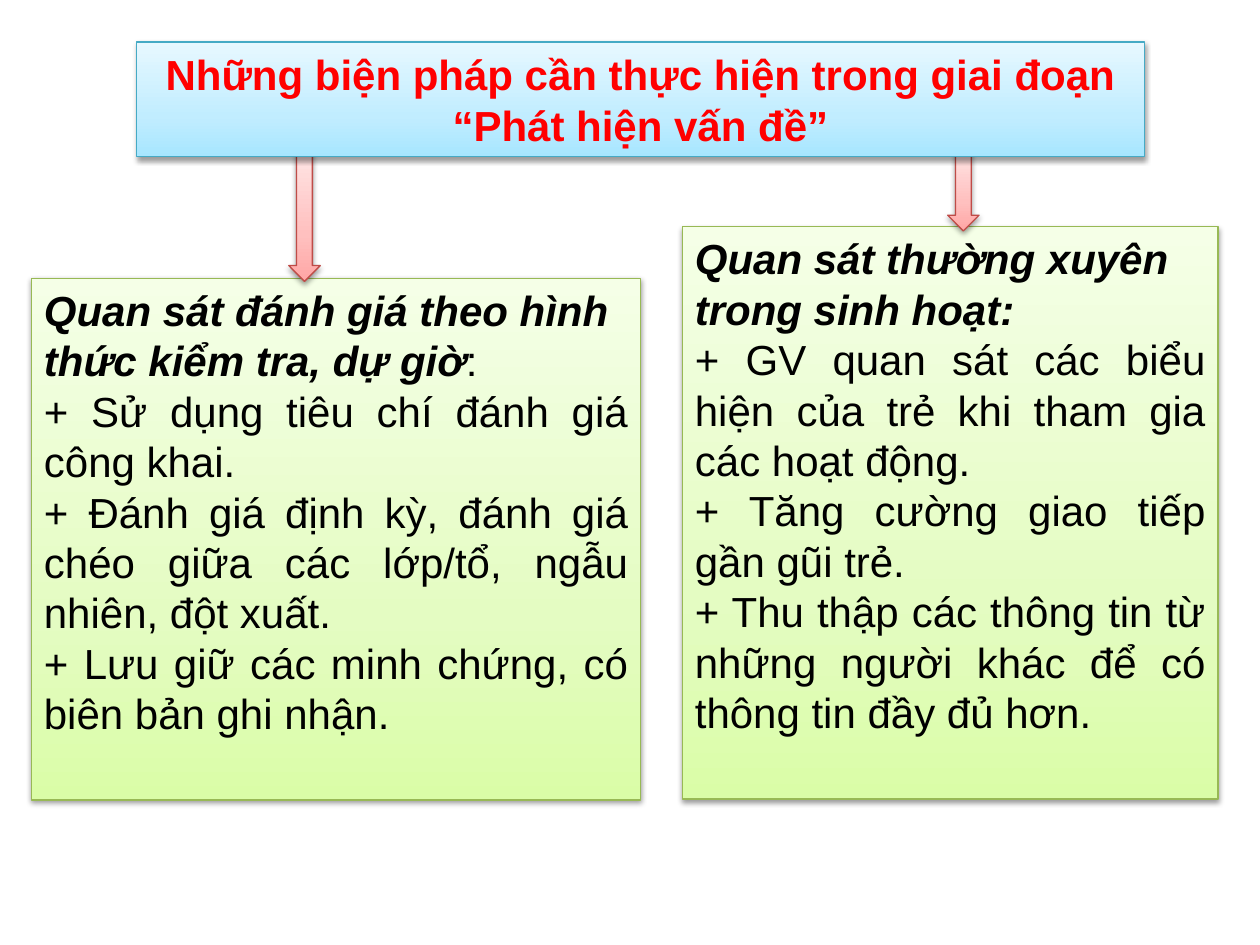
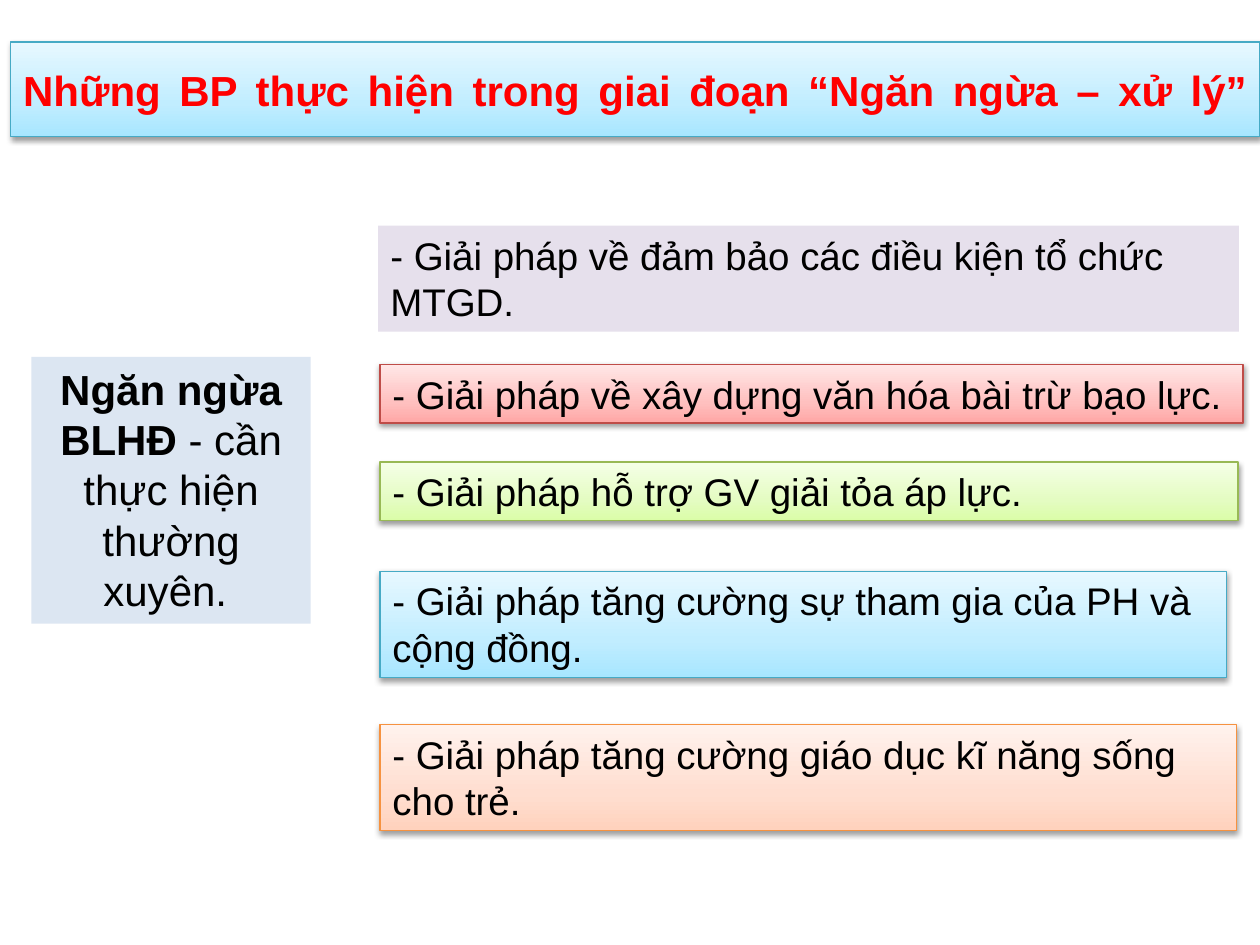
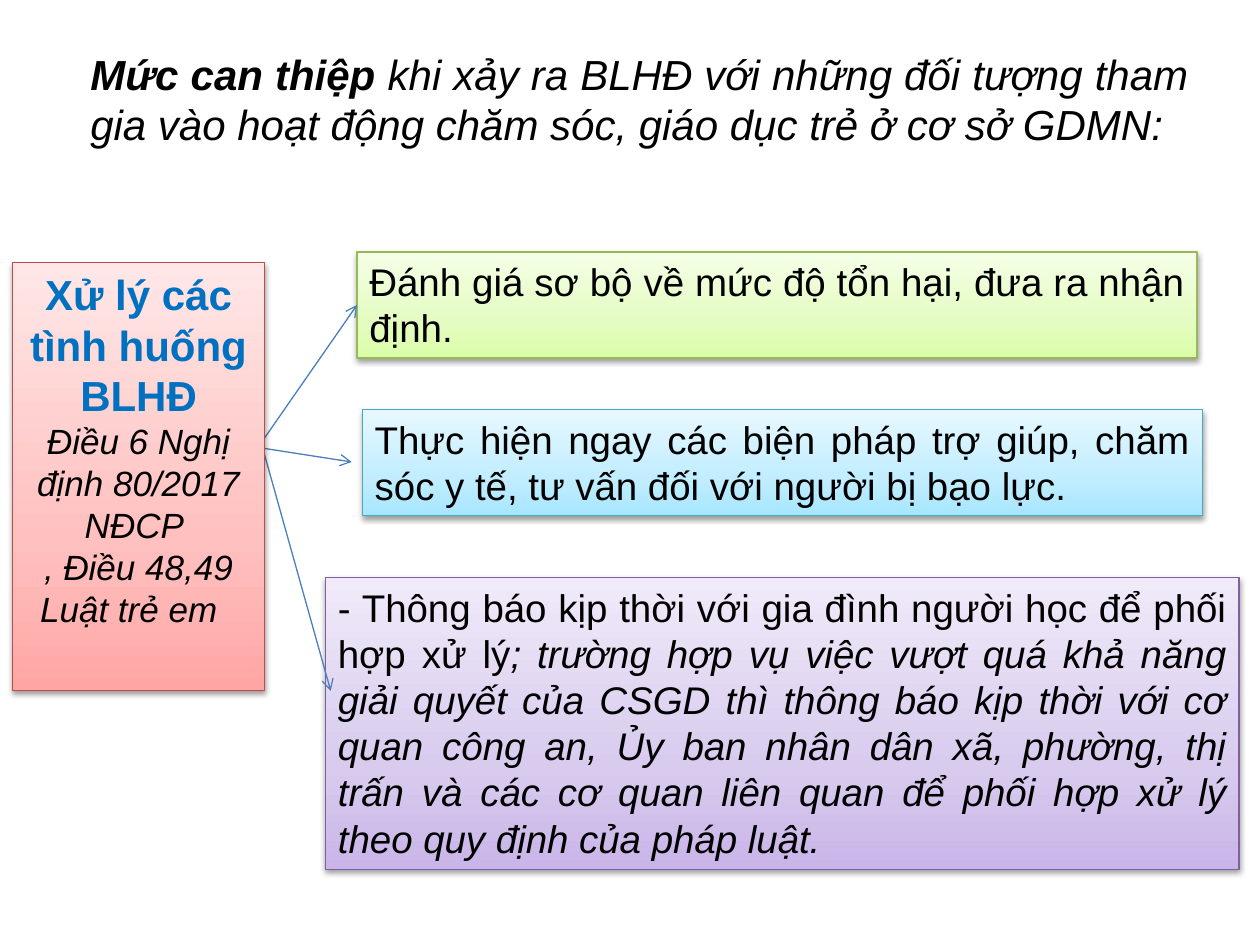
"""Build three slides on handling violence in preschool care."""
from copy import deepcopy

from lxml import etree
from pptx import Presentation
from pptx import util as u
from pptx.dml.color import RGBColor
from pptx.enum import shapes, text
from pptx.oxml.ns import qn

CELL = u.Inches(10) / 120
FONT = "Arial"
RECTANGLE = shapes.MSO_SHAPE.RECTANGLE
ARROW = shapes.MSO_SHAPE.DOWN_ARROW
LEFT, CENTER, JUSTIFY = text.PP_ALIGN.LEFT, text.PP_ALIGN.CENTER, text.PP_ALIGN.JUSTIFY
TOP, MIDDLE = text.MSO_ANCHOR.TOP, text.MSO_ANCHOR.MIDDLE

BLACK = RGBColor(0x00, 0x00, 0x00)
TITLE_RED = RGBColor(0xFF, 0x00, 0x00)
HEADING_BLUE = RGBColor(0x00, 0x70, 0xC0)
LINK_BLUE = RGBColor(0x4B, 0x7E, 0xBC)
PALE_BLUE = [RGBColor(0xDC, 0xE6, 0xF2)]
PALE_PURPLE = [RGBColor(0xE6, 0xE0, 0xEC)]
GREEN = [RGBColor(0xDA, 0xFD, 0xA7), RGBColor(0xE4, 0xFC, 0xC2),
         RGBColor(0xF5, 0xFF, 0xE7), RGBColor(0x98, 0xB9, 0x55)]
RED = [RGBColor(0xFF, 0xA6, 0xA5), RGBColor(0xFF, 0xC0, 0xBF),
       RGBColor(0xFF, 0xE7, 0xE7), RGBColor(0xBF, 0x4C, 0x48)]
BLUE = [RGBColor(0xA7, 0xE6, 0xFF), RGBColor(0xC1, 0xED, 0xFF),
        RGBColor(0xE7, 0xF8, 0xFF), RGBColor(0x46, 0xAA, 0xC5)]
ORANGE = [RGBColor(0xFF, 0xD2, 0xBD), RGBColor(0xFF, 0xDE, 0xD0),
          RGBColor(0xFF, 0xF2, 0xED), RGBColor(0xF6, 0x92, 0x40)]
PURPLE = [RGBColor(0xC9, 0xB5, 0xE8), RGBColor(0xD8, 0xCB, 0xEE),
          RGBColor(0xF0, 0xEA, 0xF9), RGBColor(0x7D, 0x60, 0xA0)]


def block(slide, cells, palette, kind=RECTANGLE):
    """Place a shape, or the title when kind is None, and paint it."""
    place = [round(cell * CELL) for cell in cells]
    if kind is None:
        shape = slide.shapes.title
        shape.left, shape.top, shape.width, shape.height = place
    else:
        shape = slide.shapes.add_shape(kind, *place)
    shape.shadow.inherit = False
    if len(palette) < 4:
        shape.line.fill.background()
        if palette:
            shape.fill.solid()
            shape.fill.fore_color.rgb = palette[0]
        return shape
    *shades, edge = palette
    shape.fill.gradient()
    shape.fill.gradient_angle = 90
    stops = shape.element.find(".//" + qn("a:gsLst"))
    for stop in list(stops):
        stops.remove(stop)
    for position, shade in zip((0, 35000, 100000), shades):
        stop = etree.SubElement(stops, qn("a:gs"), pos=str(position))
        etree.SubElement(stop, qn("a:srgbClr"), val=str(shade))
    shape.line.color.rgb = edge
    shape.line.width = u.Pt(0.75)
    shadow = etree.SubElement(shape.element.find(".//" + qn("a:effectLst")), qn("a:outerShdw"),
                              blurRad="40000", dist="20000", dir="5400000", rotWithShape="0")
    tint = etree.SubElement(shadow, qn("a:srgbClr"), val=str(BLACK))
    etree.SubElement(tint, qn("a:alpha"), val="38000")
    return shape


def write(shape, paragraphs, size=24, color=BLACK, anchor=TOP):
    """Write (alignment, [(words, style), ...]) paragraphs; style letters are b and i."""
    frame = shape.text_frame
    frame.word_wrap = True
    frame.auto_size = text.MSO_AUTO_SIZE.NONE
    frame.vertical_anchor = anchor
    for index, (alignment, pieces) in enumerate(paragraphs):
        paragraph = frame.add_paragraph() if index else frame.paragraphs[0]
        paragraph.alignment = alignment
        for words, style in pieces:
            run = paragraph.add_run()
            run.text = words
            run.font.name = FONT
            run.font.size = u.Pt(size)
            run.font.color.rgb = color
            run.font.bold = "b" in style
            run.font.italic = "i" in style
    return frame


deck = Presentation()
deck.slide_width, deck.slide_height = u.Inches(10), u.Inches(7.5)
title_only = deck.slide_layouts[5]

detect = deck.slides.add_slide(title_only)
observations = [
    ((3, 26.5, 58, 49.7),
     [("Quan sát đánh giá theo hình thức kiểm tra, dự giờ", "bi"), (":", "")],
     ["+ Sử dụng tiêu chí đánh giá công khai.",
      "+ Đánh giá định kỳ, đánh giá chéo giữa các lớp/tổ, ngẫu nhiên, đột xuất.",
      "+ Lưu giữ các minh chứng, có biên bản ghi nhận."]),
    ((65, 21.6, 51, 54.5),
     [("Quan sát thường xuyên trong sinh hoạt:", "bi")],
     ["+ GV quan sát các biểu hiện của trẻ khi tham gia các hoạt động.",
      "+ Tăng cường giao tiếp gần gũi trẻ.",
      "+ Thu thập các thông tin từ những người khác để có thông tin đầy đủ hơn."]),
]
for cells, heading, measures in observations:
    write(block(detect, cells, GREEN),
          [(LEFT, heading)] + [(JUSTIFY, [(measure, "")]) for measure in measures])
for column, length in ((27.5, 12.8), (90.25, 8)):
    block(detect, (column, 14, 3, length), RED, ARROW)
detect_title = block(detect, (13, 4, 96, 10.9), BLUE, None)
write(detect_title,
      [(CENTER, [("Những biện pháp cần thực hiện trong giai đoạn “Phát hiện vấn đề”", "b")])],
      color=TITLE_RED, anchor=MIDDLE)
detect_title.element.getparent().append(detect_title.element)

prevent = deck.slides.add_slide(title_only)
prevent_title = block(prevent, (1, 4, 119, 9), BLUE, None)
headline = write(prevent_title,
                 [(JUSTIFY, [("Những BP thực hiện trong giai đoạn “Ngăn ngừa – xử lý”", "b")])],
                 color=TITLE_RED, anchor=MIDDLE).paragraphs[0].runs[0]
headline_xml = headline.font._element.getparent()
for add_break in (headline_xml.addprevious, headline_xml.addnext):
    line_break = etree.Element(qn("a:br"))
    line_break.append(deepcopy(headline_xml.find(qn("a:rPr"))))
    add_break(line_break)
write(block(prevent, (3, 34, 26.6, 25.4), PALE_BLUE),
      [(CENTER, [("Ngăn ngừa BLHĐ ", "b"), ("- cần thực hiện thường xuyên. ", "")])])
solutions = [
    ((36, 21.5, 82, 10.1), PALE_PURPLE, "- Giải pháp về đảm bảo các điều kiện tổ chức MTGD."),
    ((36.2, 34.7, 82.2, 5.6), RED, "- Giải pháp về xây dựng văn hóa bài trừ bạo lực."),
    ((36.2, 44, 81.7, 5.6), GREEN, "- Giải pháp hỗ trợ GV giải tỏa áp lực."),
    ((36.2, 54.4, 80.6, 10.1), BLUE, "- Giải pháp tăng cường sự tham gia của PH và cộng đồng."),
    ((36.2, 69, 81.6, 10.1), ORANGE, "- Giải pháp tăng cường giáo dục kĩ năng sống cho trẻ."),
]
for cells, palette, solution in solutions:
    write(block(prevent, cells, palette), [(LEFT, [(solution, "")])], size=22)

respond = deck.slides.add_slide(title_only)
write(block(respond, (7.4, 4, 107, 10.9), [], None),
      [(JUSTIFY, [("Mức can thiệp ", "bi"),
                  ("khi xảy ra BLHĐ với những đối tượng tham gia vào hoạt động chăm sóc, "
                   "giáo dục trẻ ở cơ sở GDMN:", "i")])])
notify = block(respond, (31, 55, 87, 27.8), PURPLE)
assess = block(respond, (34, 24, 80, 10.1), GREEN)
support = block(respond, (34.5, 39, 80, 10.1), BLUE)
steps = [
    (notify, [("- Thông báo kịp thời với gia đình người học để phối hợp xử lý", ""),
              ("; trường hợp vụ việc vượt quá khả năng giải quyết của CSGD thì thông báo kịp thời "
               "với cơ quan công an, Ủy ban nhân dân xã, phường, thị trấn và các cơ quan liên quan "
               "để phối hợp xử lý theo quy định của pháp luật.", "i")]),
    (assess, [("Đánh giá sơ bộ về mức độ tổn hại, đưa ra nhận định.", "")]),
    (support, [("Thực hiện ngay các biện pháp trợ giúp, chăm sóc y tế, "
                "tư vấn đối với người bị bạo lực.", "")]),
]
for step, pieces in steps:
    write(step, [(JUSTIFY, pieces)], size=22)
for ends, target in (((25, 42, 34, 29), assess),
                     ((25, 42.6, 31.5, 65.8), None),
                     ((24.5, 42.6, 33.5, 44), None)):
    link = respond.shapes.add_connector(shapes.MSO_CONNECTOR.STRAIGHT,
                                        *[round(cell * CELL) for cell in ends])
    if target:
        link.end_connect(target, 1)
    link.line.color.rgb = LINK_BLUE
    link.line.width = u.Pt(0.75)
    etree.SubElement(link.line._get_or_add_ln(), qn("a:tailEnd"), type="arrow")
    etree.SubElement(link.element.spPr, qn("a:effectLst"))
cases = write(block(respond, (1.2, 25, 24, 40.8), RED),
              [(CENTER, [("Xử lý các tình huống BLHĐ", "b")]),
               (CENTER, [("Điều 6 Nghị định 80/2017 NĐCP ", "i")]),
               (CENTER, [(", Điều 48,49 Luật trẻ em  ", "i")])], size=20)
cases_heading = cases.paragraphs[0].runs[0].font
cases_heading.size = u.Pt(24)
cases_heading.color.rgb = HEADING_BLUE

deck.save("out.pptx")
